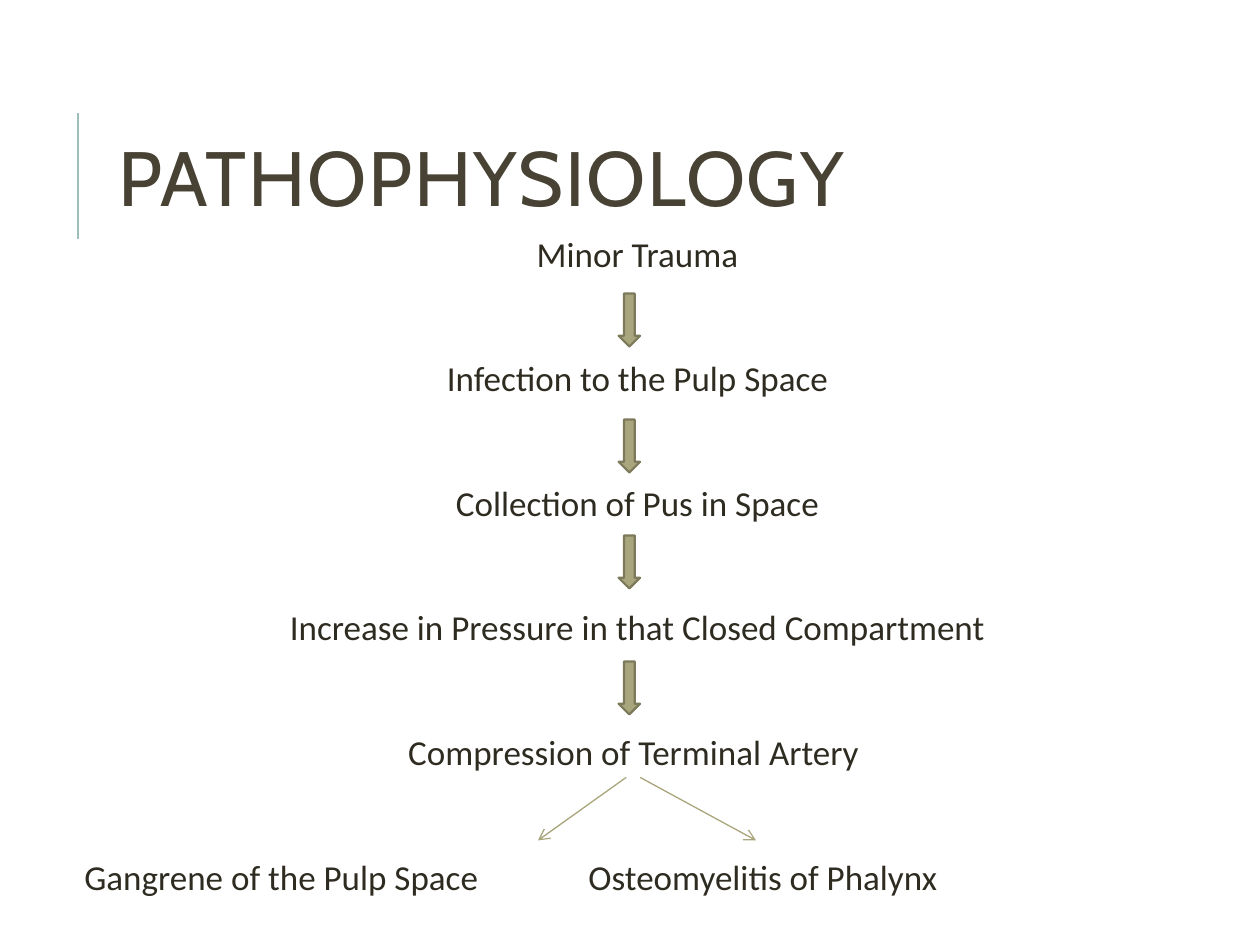
from dataclasses import dataclass

from lxml.etree import SubElement
from pptx import Presentation
from pptx.dml.color import RGBColor
from pptx.enum.shapes import MSO_CONNECTOR, MSO_SHAPE
from pptx.enum.text import MSO_ANCHOR, PP_ALIGN
from pptx.oxml.ns import qn
from pptx.slide import Slide
from pptx.text.text import TextFrame
from pptx.util import Inches, Pt

TEAL = RGBColor(0x9C, 0xBE, 0xBD)
BROWN = RGBColor(0x47, 0x42, 0x33)
INK = RGBColor(0x2E, 0x2B, 0x21)
OLIVE = RGBColor(0xA9, 0xA5, 0x7C)
EDGE = RGBColor(0x7D, 0x7A, 0x5C)


@dataclass
class Line:
    start: tuple[float, float]
    end: tuple[float, float]
    color: RGBColor
    width: float
    arrow: bool = False


@dataclass
class Step:
    text: str
    before: float = 47.6
    align: PP_ALIGN = PP_ALIGN.CENTER


RULE = Line((0.62, 1.9), (0.62, 0.9), TEAL, 1.5)
FORKS = [
    Line((5.08, 6.17), (6, 6.67), OLIVE, 0.75, True),
    Line((4.97, 6.17), (4.27, 6.67), OLIVE, 0.75, True),
]
STEPS = [
    Step("Minor Trauma", 12),
    Step("Infection to the Pulp Space"),
    Step("Collection of Pus in Space"),
    Step("Increase in Pressure in that Closed Compartment"),
    Step("Compression of Terminal Artery "),
    Step("\tGangrene of the Pulp Space\t\tOsteomyelitis of Phalynx", align=PP_ALIGN.LEFT),
]
ARROW_TOPS = [2.33, 3.33, 4.25, 5.25]


def draw_line(slide: Slide, line: Line) -> None:
    ends = [Inches(n) for n in line.start + line.end]
    link = slide.shapes.add_connector(MSO_CONNECTOR.STRAIGHT, *ends)
    link.line.color.rgb = line.color
    link.line.width = Pt(line.width)
    if line.arrow:
        SubElement(link.line._get_or_add_ln(), qn("a:tailEnd"), type="arrow")
    SubElement(link._element.spPr, qn("a:effectLst"))


def draw_arrow(slide: Slide, top: float) -> None:
    arrow = slide.shapes.add_shape(
        MSO_SHAPE.DOWN_ARROW, Inches(4.91), Inches(top), Inches(0.17), Inches(0.42)
    )
    arrow.shadow.inherit = False
    arrow.fill.solid()
    arrow.fill.fore_color.rgb = OLIVE
    arrow.line.color.rgb = EDGE
    arrow.line.width = Pt(1.25)


def add_box(slide: Slide, left: float, top: float, width: float, height: float) -> TextFrame:
    box = slide.shapes.add_textbox(Inches(left), Inches(top), Inches(width), Inches(height))
    box.text_frame.word_wrap = True
    return box.text_frame


def draw_title(slide: Slide) -> None:
    frame = add_box(slide, 0.84, 0.64, 7.97, 1.64)
    frame.vertical_anchor = MSO_ANCHOR.MIDDLE
    para = frame.paragraphs[0]
    para.line_spacing = 0.8
    run = para.add_run()
    run.text = "PATHOPHYSIOLOGY"
    run.font.name = "Cabin"
    run.font.size = Pt(44)
    run.font.color.rgb = BROWN
    run.font._element.set("spc", "100")


def draw_steps(slide: Slide, steps: list[Step]) -> None:
    frame = add_box(slide, 0, 1.83, 10, 5.92)
    frame.margin_left = frame.margin_right = Inches(0.05)
    frame.margin_top = frame.margin_bottom = Inches(0.05)
    for index, step in enumerate(steps):
        para = frame.add_paragraph() if index else frame.paragraphs[0]
        para.alignment = step.align
        para.line_spacing = 0.9
        para.space_before = Pt(step.before)
        para.space_after = Pt(2)
        props = para._p.get_or_add_pPr()
        props.set("marL", str(Inches(0.12)))
        props.set("indent", "0")
        run = para.add_run()
        run.text = step.text
        run.font.name = "Calibri"
        run.font.size = Pt(20)
        run.font.color.rgb = INK


def main() -> None:
    deck = Presentation()
    deck.slide_width = Inches(10)
    deck.slide_height = Inches(7.5)
    slide = deck.slides.add_slide(deck.slide_layouts[6])
    draw_line(slide, RULE)
    draw_title(slide)
    draw_steps(slide, STEPS)
    for top in ARROW_TOPS:
        draw_arrow(slide, top)
    for fork in FORKS:
        draw_line(slide, fork)
    deck.save("out.pptx")


if __name__ == "__main__":
    main()
